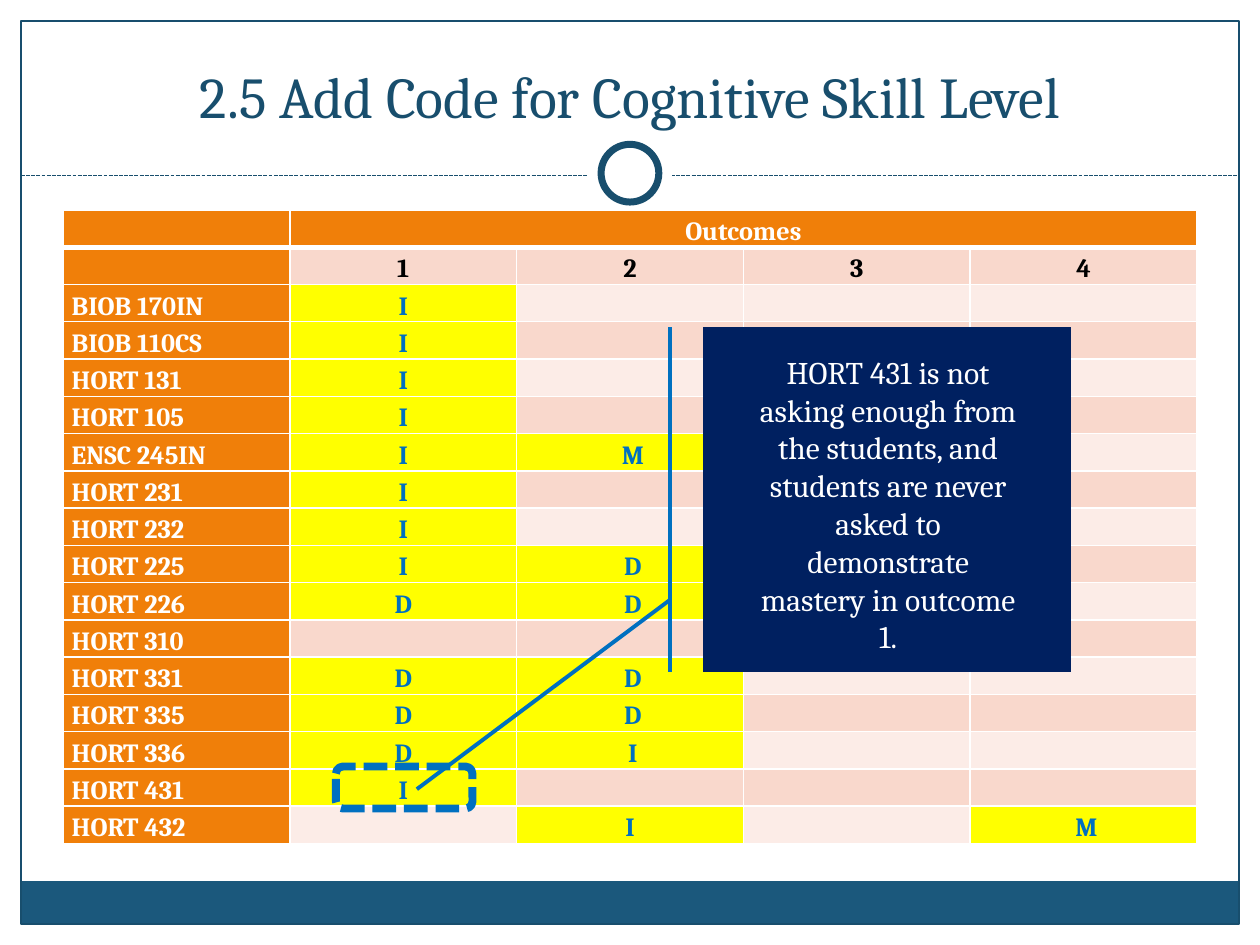
from dataclasses import dataclass

import pptx
import pptx.dml.color
import pptx.enum.dml
import pptx.enum.shapes
import pptx.enum.text
import pptx.oxml
import pptx.oxml.ns
import pptx.util

Pt = pptx.util.Pt
SHAPE = pptx.enum.shapes.MSO_SHAPE
ANCHOR = pptx.enum.text.MSO_ANCHOR
ALIGN = pptx.enum.text.PP_ALIGN
DASH = pptx.enum.dml.MSO_LINE.SQUARE_DOT


@dataclass(frozen=True)
class Theme:
    font: str = "Cambria"
    title_size: float = 33
    note_size: float = 18
    table_size: float = 15
    white: str = "FFFFFF"
    black: str = "000000"
    frame: str = "184E6D"
    footer: str = "1B587C"
    header: str = "F07F09"
    band_dark: str = "F9D8CC"
    band_light: str = "FCECE7"
    marked: str = "FFFF00"
    accent: str = "0070C0"
    note: str = "002060"


T = Theme()

# Course, then the skill code for each outcome
COURSES = [
    ("BIOB 170IN", "I", "", "", ""),
    ("BIOB 110CS", "I", "", "", ""),
    ("HORT 131", "I", "", "", ""),
    ("HORT 105", "I", "", "", ""),
    ("ENSC 245IN", "I", " M", "", ""),
    ("HORT 231", "I", "", "", ""),
    ("HORT 232", "I", "", "", ""),
    ("HORT 225", "I", " D", "", ""),
    ("HORT 226", "D", " D", "", ""),
    ("HORT 310", "", "", "", ""),
    ("HORT 331", "D", " D", "", ""),
    ("HORT 335", "D", " D", "", ""),
    ("HORT 336", "D", " I", "", ""),
    ("HORT 431", "I", "", "", ""),
    ("HORT 432", "", "I", "", " M"),
]
ROWS = [("", "Outcomes", "", "", ""), ("", "1", "2", "3", "4")] + COURSES


def rgb(value):
    return pptx.dml.color.RGBColor.from_string(value)


def style_line(line, color, width, dash=None):
    line.color.rgb = rgb(color)
    line.width = Pt(width)
    if dash is not None:
        line.dash_style = dash


def add_shape(s, kind, box, fill=None, line=None, width=0.75, dash=None):
    sp = s.shapes.add_shape(kind, *map(Pt, box))
    sp.shadow.inherit = False
    if fill:
        sp.fill.solid()
        sp.fill.fore_color.rgb = rgb(fill)
    else:
        sp.fill.background()
    if line:
        style_line(sp.line, line, width, dash)
    else:
        sp.line.fill.background()
    return sp


def format_text(p, size, color, align, bold=False):
    p.alignment = align
    for r in p.runs:
        r.font.name = T.font
        r.font.size = Pt(size)
        r.font.bold = bold
        r.font.color.rgb = rgb(color)


def add_text(s, box, text, size, color, anchor):
    tf = s.shapes.add_textbox(*map(Pt, box)).text_frame
    tf.word_wrap = True
    tf.vertical_anchor = anchor
    tf.text = text
    format_text(tf.paragraphs[0], size, color, ALIGN.CENTER)


def add_frame(s, box):
    """Border, footer band and the dashed rule with its ring."""
    x, y, w, h = box
    footer_h, rule_y = 24.5, y + 88.5
    add_shape(s, SHAPE.RECTANGLE, (x, y + h - footer_h, w, footer_h), T.footer)
    add_shape(s, SHAPE.RECTANGLE, box, line=T.frame)
    rule = s.shapes.add_connector(pptx.enum.shapes.MSO_CONNECTOR.STRAIGHT,
                                  Pt(x), Pt(rule_y), Pt(x + w), Pt(rule_y))
    style_line(rule.line, T.frame, 0.75, DASH)
    rule._element.spPr.append(pptx.oxml.parse_xml(
        f'<a:effectLst {pptx.oxml.ns.nsdecls("a")}/>'))
    for size, line in ((48, None), (33, T.frame)):
        ring = (x + (w - size) / 2, rule_y - 1.5 - size / 2, size, size)
        add_shape(s, SHAPE.OVAL, ring, T.white, line, 4)


def set_borders(cell, top, bottom):
    tc_pr = cell._tc.get_or_add_tcPr()
    widths = {"lnL": 1, "lnR": 1, "lnT": top, "lnB": bottom}
    for i, (tag, width) in enumerate(widths.items()):
        tc_pr.insert(i, pptx.oxml.parse_xml(
            f'<a:{tag} {pptx.oxml.ns.nsdecls("a")} w="{Pt(width)}"><a:solidFill>'
            f'<a:srgbClr val="{T.white}"/></a:solidFill></a:{tag}>'))


def cell_colors(row, col, text):
    """Fill and text colour of a table cell."""
    if row == 0 or col == 0:
        return T.header, T.white
    if row > 1 and text:
        return T.marked, T.accent
    return (T.band_dark if row % 2 else T.band_light), T.black


def add_outcomes_table(s, box):
    x, y, w, h = box
    n_rows, n_cols = len(ROWS), len(ROWS[0])
    table = s.shapes.add_table(n_rows, n_cols, *map(Pt, box)).table
    table.first_row = table.horz_banding = False
    for column in table.columns:
        column.width = Pt(w / n_cols)
    for i, values in enumerate(ROWS):
        table.rows[i].height = Pt(h / n_rows)
        for j, text in enumerate(values):
            cell = table.cell(i, j)
            fill, color = cell_colors(i, j, text)
            cell.fill.solid()
            cell.fill.fore_color.rgb = rgb(fill)
            set_borders(cell, 3 if i == 1 else 1, 3 if i == 0 else 1)
            cell.margin_left = cell.margin_right = Pt(5)
            cell.margin_top = cell.margin_bottom = 0
            cell.vertical_anchor = ANCHOR.BOTTOM
            p = cell.text_frame.paragraphs[0]
            p.line_spacing = 1.15
            if text:
                p.text = text
                format_text(p, T.table_size, color,
                            ALIGN.CENTER if j else ALIGN.LEFT, bold=True)
            else:  # keeps empty cells from stretching their row
                p._p.append(pptx.oxml.parse_xml(
                    f'<a:endParaRPr {pptx.oxml.ns.nsdecls("a")} '
                    f'sz="{T.table_size * 100}"/>'))
    table.cell(0, 1).merge(table.cell(0, n_cols - 1))


def add_callout(s, box, text):
    x, y, w, h = box
    sp = add_shape(s, SHAPE.LINE_CALLOUT_1_ACCENT_BAR, box, T.note, T.accent, 2.25)
    for i, value in enumerate((0.79, -0.09, 1.34, -0.78)):
        sp.adjustments[i] = value
    add_text(s, (x + 21.5, y + 11, 168, 181), text, T.note_size, T.white, ANCHOR.TOP)


def main():
    prs = pptx.Presentation()
    prs.slide_width, prs.slide_height = Pt(720), Pt(540)
    s = prs.slides.add_slide(prs.slide_layouts[6])
    add_frame(s, (12, 12, 696, 516))
    add_text(s, (24, 18, 672, 60), "2.5 Add Code for Cognitive Skill Level",
             T.title_size, T.frame, ANCHOR.BOTTOM)
    add_outcomes_table(s, (36, 120, 648, 362))
    add_shape(s, SHAPE.ROUNDED_RECTANGLE, (192, 438, 78, 24),
              line=T.accent, width=4.5, dash=DASH)
    add_callout(s, (402, 187, 210, 197),
                "HORT 431 is not asking enough from the students, and students "
                "are never asked to demonstrate mastery in outcome 1.")
    prs.save("out.pptx")


if __name__ == "__main__":
    main()
